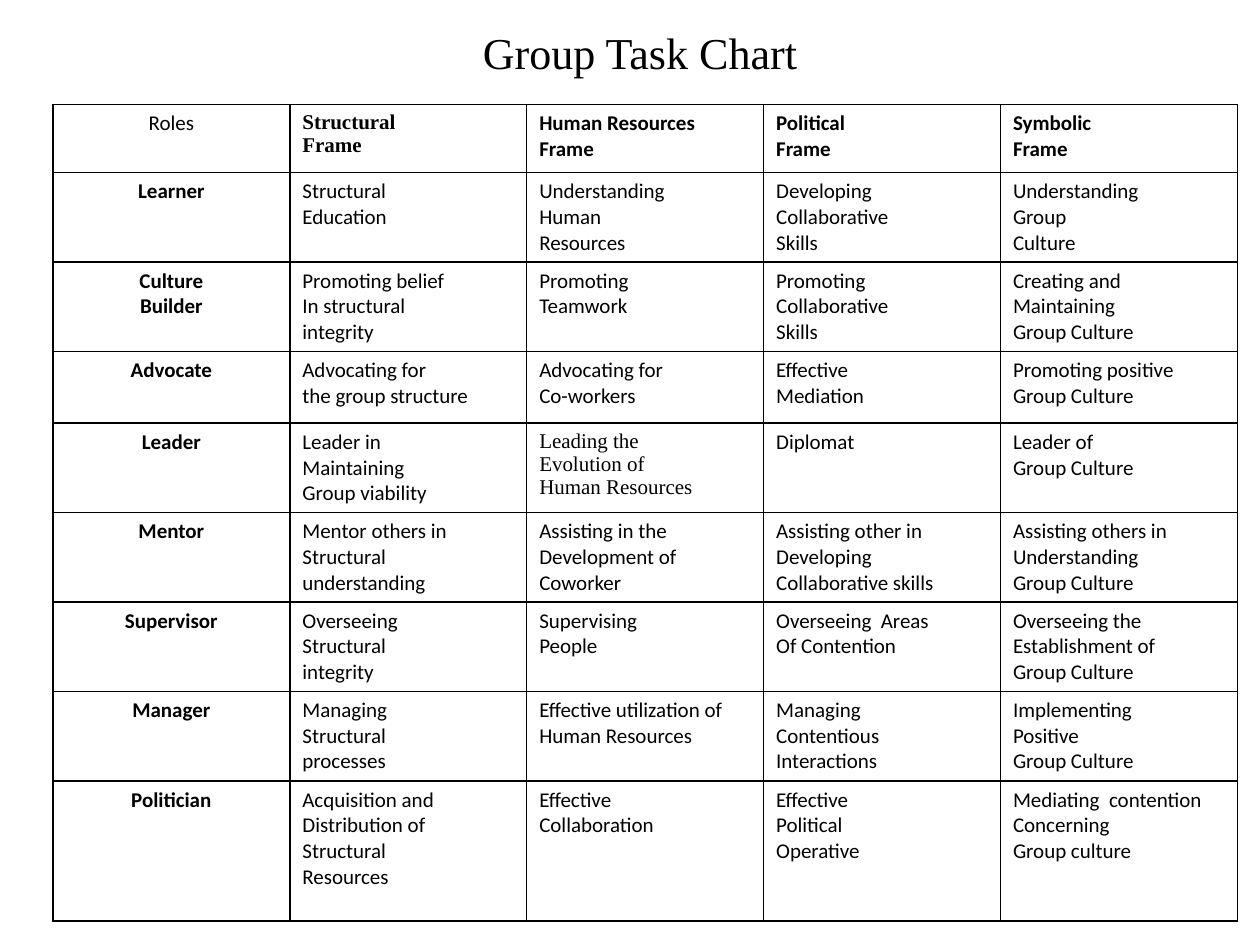
from dataclasses import dataclass

from lxml import etree
from pptx import Presentation
from pptx.dml.color import RGBColor
from pptx.enum import text
from pptx.oxml import ns
from pptx.util import Inches, Pt


@dataclass(frozen=True)
class Theme:
    ink: str = "000000"
    body_font: str = "Calibri"
    serif_font: str = "Times New Roman"
    title_size: float = 25.2
    body_size: float = 12
    border_width: float = 1


THEME = Theme()
COLUMN_WIDTH = 1.88
ROW_HEIGHTS = [0.54, 0.71, 0.71, 0.57, 0.71, 0.71, 0.71, 0.71, 1.11]
SERIF_CELLS = {(0, 1), (4, 2)}

# Each line within a cell is its own paragraph.
TASKS = [
    ["Roles", "Structural\nFrame", "Human Resources\nFrame",
     "Political\nFrame", "Symbolic\nFrame"],
    ["Learner", "Structural\nEducation", "Understanding\nHuman\nResources",
     "Developing\nCollaborative\nSkills", "Understanding\nGroup\nCulture"],
    ["Culture\nBuilder", "Promoting belief\nIn structural\nintegrity",
     "Promoting\nTeamwork", "Promoting\nCollaborative\nSkills",
     "Creating and\nMaintaining\nGroup Culture"],
    ["Advocate", "Advocating for\nthe group structure",
     "Advocating for\nCo-workers", "Effective\nMediation",
     "Promoting positive\nGroup Culture"],
    ["Leader", "Leader in\nMaintaining\nGroup viability",
     "Leading the\nEvolution of\nHuman Resources", "Diplomat",
     "Leader of\nGroup Culture"],
    ["Mentor", "Mentor others in\nStructural\nunderstanding",
     "Assisting in the\nDevelopment of\nCoworker",
     "Assisting other in\nDeveloping\nCollaborative skills",
     "Assisting others in\nUnderstanding\nGroup Culture"],
    ["Supervisor", "Overseeing\nStructural\nintegrity", "Supervising\nPeople",
     "Overseeing  Areas\nOf Contention",
     "Overseeing the\nEstablishment of\nGroup Culture"],
    ["Manager", "Managing\nStructural\nprocesses",
     "Effective utilization of\nHuman Resources",
     "Managing\nContentious\nInteractions",
     "Implementing\nPositive\nGroup Culture"],
    ["Politician", "Acquisition and\nDistribution of\nStructural\nResources",
     "Effective\nCollaboration", "Effective\nPolitical\nOperative",
     "Mediating  contention\nConcerning\nGroup culture"],
]


def format_text(frame, font, size, bold, align):
    for para in frame.paragraphs:
        para.alignment = align
        for span in para.runs:
            span.font.name = font
            span.font.size = Pt(size)
            span.font.bold = bold
            span.font.color.rgb = RGBColor.from_string(THEME.ink)


def add_borders(cell):
    properties = cell._tc.get_or_add_tcPr()
    for index, side in enumerate(("lnL", "lnR", "lnT", "lnB")):
        line = etree.Element(ns.qn(f"a:{side}"), w=str(Pt(THEME.border_width)))
        fill = etree.SubElement(line, ns.qn("a:solidFill"))
        etree.SubElement(fill, ns.qn("a:srgbClr"), val=THEME.ink)
        properties.insert(index, line)


def add_title(page, words):
    title = page.shapes.title
    title.left, title.top = Inches(0.58), Inches(0.25)
    title.width, title.height = Inches(9), Inches(0.33)
    frame = title.text_frame
    frame.text = words
    frame.vertical_anchor = text.MSO_ANCHOR.MIDDLE
    format_text(frame, THEME.serif_font, THEME.title_size, False,
                text.PP_ALIGN.CENTER)


def fill_cell(cell, words, row, column):
    """Write one cell; the heading row and the role column are bold, except their corner."""
    cell.text_frame.text = words
    font = THEME.serif_font if (row, column) in SERIF_CELLS else THEME.body_font
    align = text.PP_ALIGN.LEFT if column else text.PP_ALIGN.CENTER
    bold = (row == 0) != (column == 0)
    format_text(cell.text_frame, font, THEME.body_size, bold, align)
    cell.fill.background()
    add_borders(cell)


def add_task_table(page):
    columns = len(TASKS[0])
    table = page.shapes.add_table(
        len(TASKS), columns, Inches(0.42), Inches(0.83),
        Inches(COLUMN_WIDTH * columns), Inches(sum(ROW_HEIGHTS))).table
    table.first_row = table.horz_banding = False
    for column in table.columns:
        column.width = Inches(COLUMN_WIDTH)
    for row, (height, entries) in enumerate(zip(ROW_HEIGHTS, TASKS)):
        table.rows[row].height = Inches(height)
        for column, words in enumerate(entries):
            fill_cell(table.cell(row, column), words, row, column)


def main():
    deck = Presentation()
    deck.slide_width, deck.slide_height = Inches(10), Inches(7.5)
    page = deck.slides.add_slide(deck.slide_layouts.get_by_name("Title Only"))
    add_title(page, "Group Task Chart")
    add_task_table(page)
    deck.save("out.pptx")


if __name__ == "__main__":
    main()
